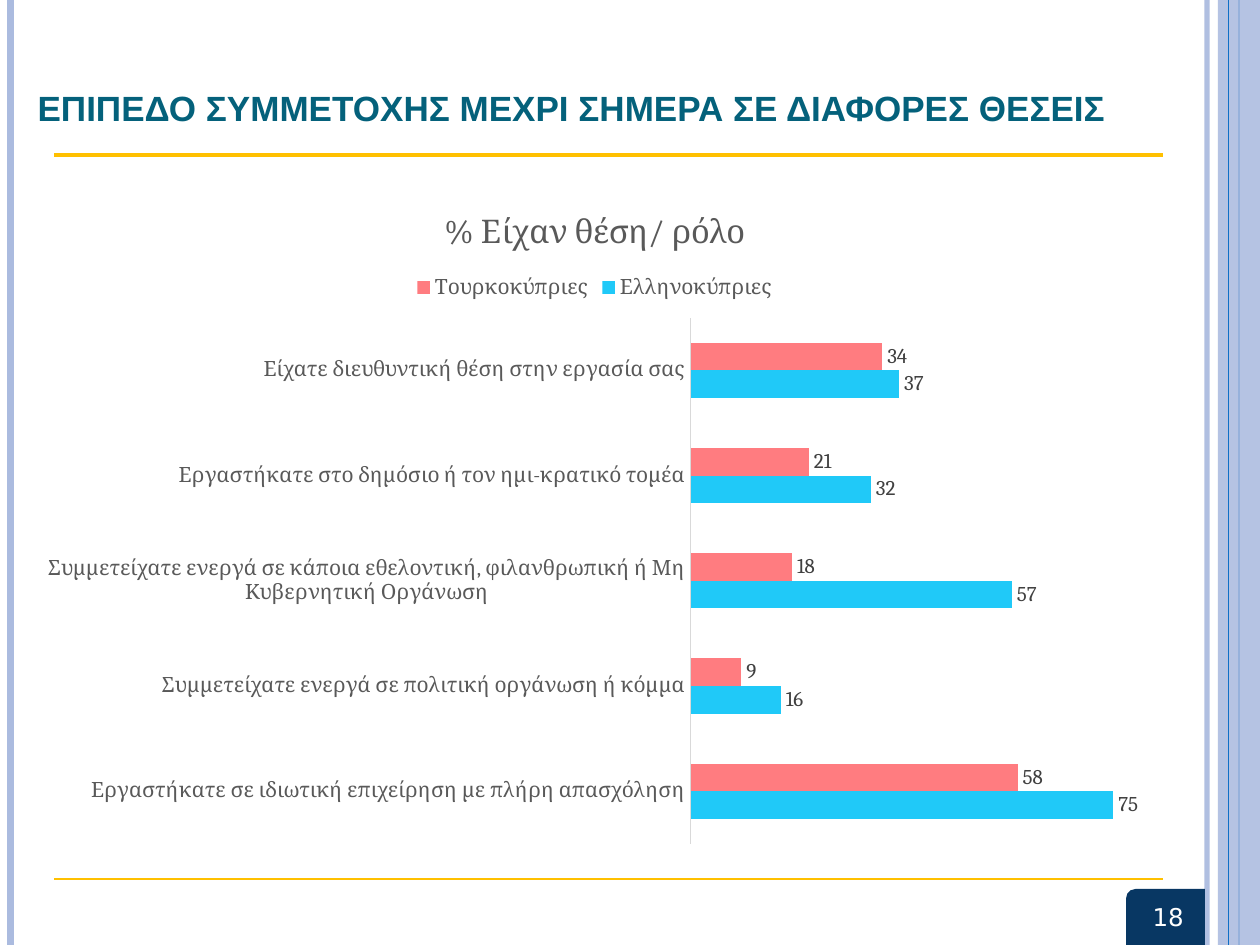
"""Builds the slide on positions held so far, with a clustered bar chart."""
from lxml.etree import SubElement
from pptx import Presentation
from pptx.chart.data import CategoryChartData
from pptx.dml.color import RGBColor
from pptx.enum.chart import XL_CHART_TYPE as ChartType
from pptx.enum.chart import XL_LABEL_POSITION as LabelPosition
from pptx.enum.chart import XL_LEGEND_POSITION as LegendPosition
from pptx.enum.chart import XL_TICK_MARK as TickMark
from pptx.enum.shapes import MSO_CONNECTOR as Connector
from pptx.enum.shapes import MSO_SHAPE as Shape
from pptx.enum.text import MSO_ANCHOR as Anchor
from pptx.enum.text import PP_ALIGN as Align
from pptx.oxml.ns import qn
from pptx.util import Pt

COLORS = {
    "pale": "ABBBDF", "blue": "0F6FC6", "navy": "083763", "teal": "04617B",
    "gold": "FFC000", "white": "FFFFFF", "black": "000000", "axis": "D9D9D9",
    "grey": "595959", "label": "404040", "cyan": "20C9F8", "coral": "FF7C80",
}
WIDTH, HEIGHT = 720, 540
CATEGORIES = [
    "Εργαστήκατε σε ιδιωτική επιχείρηση με πλήρη απασχόληση",
    "Συμμετείχατε ενεργά σε πολιτική οργάνωση ή κόμμα",
    "Συμμετείχατε ενεργά σε κάποια εθελοντική, φιλανθρωπική ή Μη Κυβερνητική Οργάνωση",
    "Εργαστήκατε στο δημόσιο ή τον ημι-κρατικό τομέα",
    "Είχατε διευθυντική θέση στην εργασία σας",
]
SERIES = [
    ("Ελληνοκύπριες", (75, 16, 57, 32, 37), "cyan"),
    ("Τουρκοκύπριες", (58, 9, 18, 21, 34), "coral"),
]


def rgb(name):
    return RGBColor.from_string(COLORS[name])


def set_font(font, face, size, color, bold=False):
    font.name, font.size, font.bold = face, Pt(size), bold
    font.color.rgb = rgb(color)


def set_alpha(element, percent):
    color = next(element.iter(qn("a:srgbClr")))
    SubElement(color, qn("a:alpha")).set("val", str(percent * 1000))


def add_line(page, start, end, color, weight, alpha=None):
    line = page.shapes.add_connector(
        Connector.STRAIGHT, *(Pt(value) for value in start + end))
    line.line.color.rgb = rgb(color)
    line.line.width = Pt(weight)
    properties = line._element.spPr
    if alpha:
        set_alpha(properties, alpha)
    SubElement(properties, qn("a:effectLst"))


def add_vertical(page, x, color, weight, alpha=None):
    add_line(page, (x, 0), (x, HEIGHT), color, weight, alpha)


def add_panel(page, kind, frame, color):
    panel = page.shapes.add_shape(kind, *(Pt(value) for value in frame))
    panel.shadow.inherit = False
    panel.fill.solid()
    panel.fill.fore_color.rgb = rgb(color)
    panel.line.fill.background()
    return panel


def add_text(page, frame, text, face, size, color, anchor, align, bold=False):
    box = page.shapes.add_textbox(*(Pt(value) for value in frame))
    box.text_frame.word_wrap = True
    box.text_frame.vertical_anchor = anchor
    para = box.text_frame.paragraphs[0]
    para.text, para.alignment = text, align
    set_font(para.font, face, size, color, bold)


def add_frame(page):
    add_vertical(page, 689.8, "pale", 3, 93)
    add_vertical(page, 6, "pale", 4.5)
    add_vertical(page, 708, "blue", 1.5)
    band = add_panel(page, Shape.RECTANGLE, (696, 0, 24, HEIGHT), "pale")
    set_alpha(band._element.spPr, 87)
    add_vertical(page, 702, "blue", 0.75)
    tab = add_panel(page, Shape.ROUND_1_RECTANGLE, (643.5, 508, 45, 32), "navy")
    tab._element.spPr.find(qn("a:xfrm")).set("flipH", "1")


def style_series(series, color):
    series.format.fill.solid()
    series.format.fill.fore_color.rgb = rgb(color)
    series.invert_if_negative = False
    labels = series.data_labels
    labels.show_value = True
    labels.position = LabelPosition.OUTSIDE_END
    labels.number_format, labels.number_format_is_linked = "0", False
    set_font(labels.font, "Cambria", 12, "label")


def style_axes(chart):
    category, value = chart.category_axis, chart.value_axis
    category.major_tick_mark = category.minor_tick_mark = TickMark.NONE
    category.format.line.color.rgb = rgb("axis")
    category.format.line.width = Pt(0.75)
    set_font(category.tick_labels.font, "Cambria", 12, "grey")
    value.visible = value.has_major_gridlines = False
    value.minimum_scale, value.maximum_scale = 0, 80


def add_bar_chart(page, frame, title):
    data = CategoryChartData(number_format="0")
    data.categories = CATEGORIES
    for name, values, _ in SERIES:
        data.add_series(name, values)
    chart = page.shapes.add_chart(
        ChartType.BAR_CLUSTERED, *(Pt(value) for value in frame), data).chart
    set_font(chart.font, "Cambria", 10, "black")
    chart.has_title = True
    heading = chart.chart_title.text_frame.paragraphs[0]
    heading.text = title
    set_font(heading.font, "Cambria", 18.6, "grey")
    chart.chart_title.include_in_layout = False
    chart.has_legend = True
    chart.legend.position = LegendPosition.TOP
    chart.legend.include_in_layout = False
    set_font(chart.legend.font, "Cambria", 12, "grey")
    plot = chart.plots[0]
    plot.gap_width, plot.overlap = 182, 0
    plot.vary_by_categories = False
    for series, (_, _, color) in zip(plot.series, SERIES):
        style_series(series, color)
    style_axes(chart)


def main():
    deck = Presentation()
    deck.slide_width, deck.slide_height = Pt(WIDTH), Pt(HEIGHT)
    page = deck.slides.add_slide(deck.slide_layouts[6])
    add_frame(page)
    add_text(page, (14.4, 35.3, 677.5, 41.8),
             "ΕΠΙΠΕΔΟ ΣΥΜΜΕΤΟΧΗΣ ΜΕΧΡΙ ΣΗΜΕΡΑ ΣΕ ΔΙΑΦΟΡΕΣ ΘΕΣΕΙΣ",
             "Arial", 20, "teal", Anchor.BOTTOM, Align.LEFT, True)
    add_text(page, (643.5, 500, 48, 48), "18", "DejaVu Sans", 14, "white",
             Anchor.MIDDLE, Align.CENTER)
    for y, weight in ((88.5, 2.25), (502.3, 1)):
        add_line(page, (31, y), (664.6, y), "gold", weight)
    add_bar_chart(page, (14.4, 105, 651, 385), "% Είχαν θέση/ ρόλο")
    deck.save("out.pptx")


if __name__ == "__main__":
    main()
